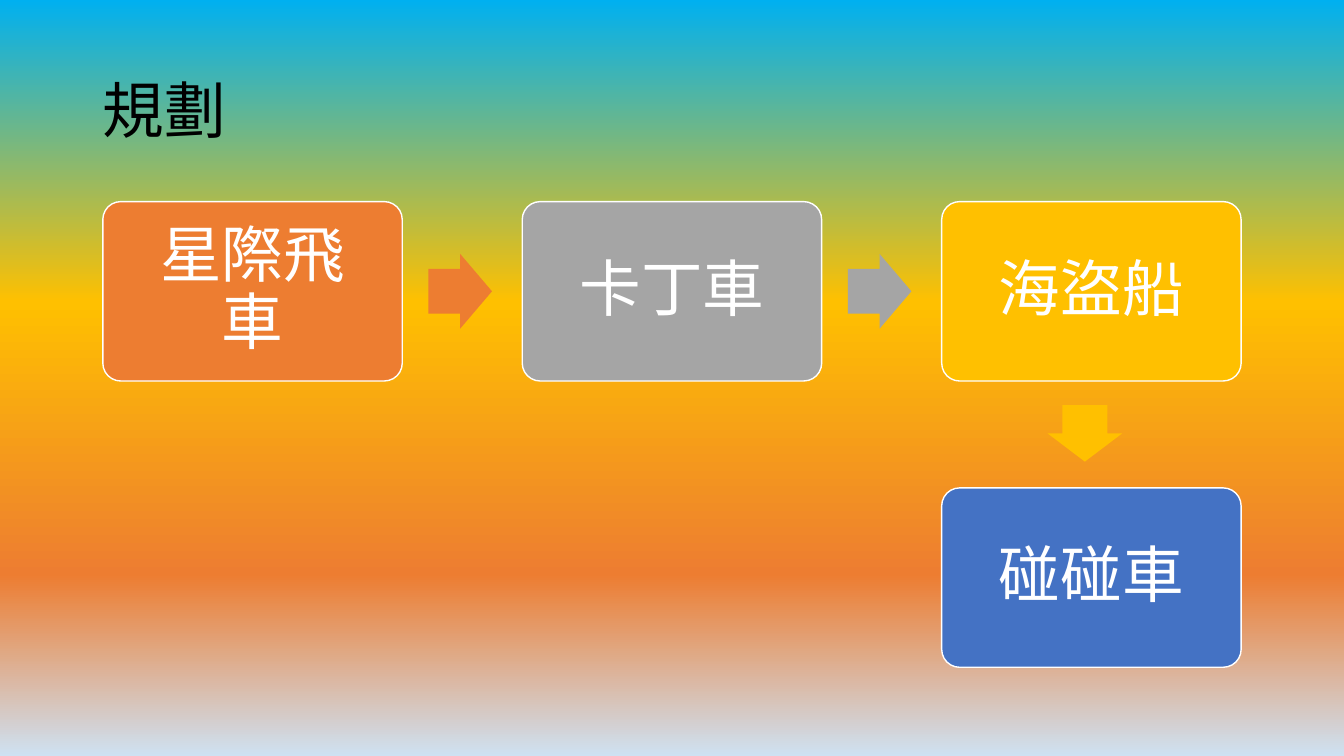
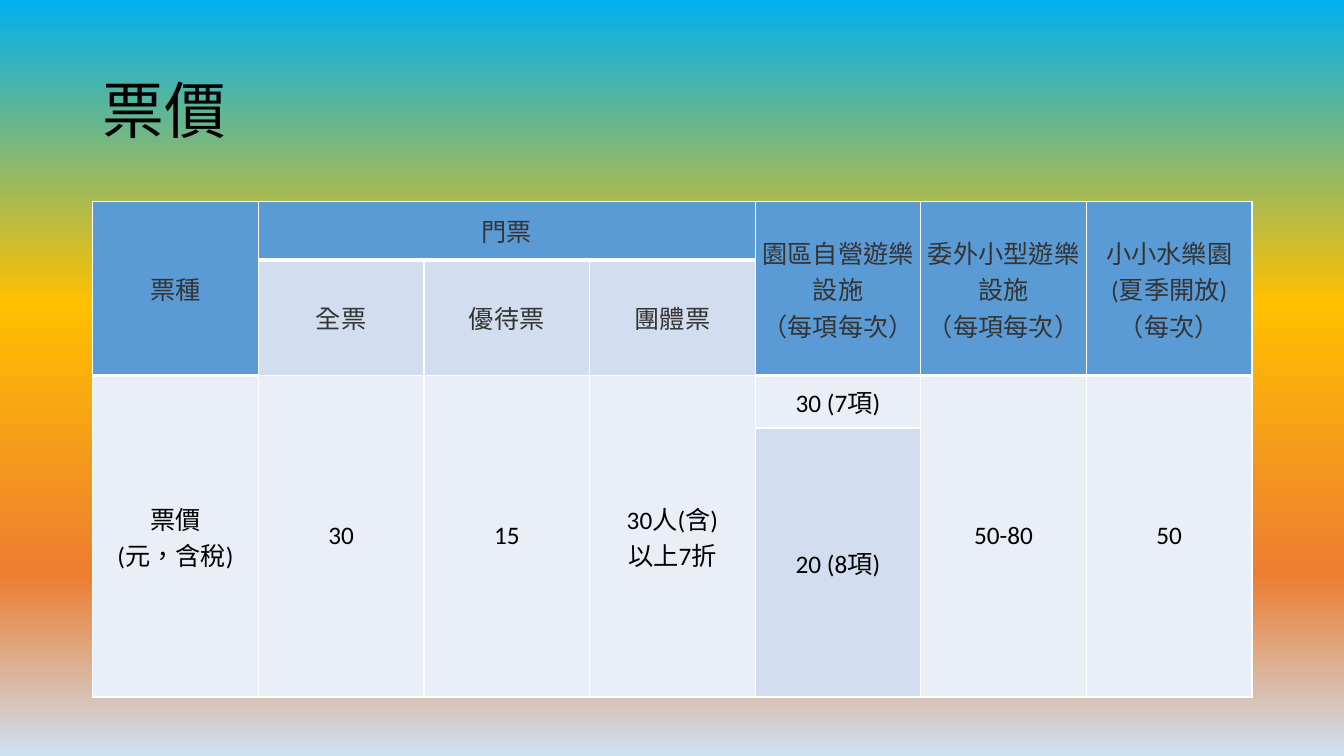
from dataclasses import dataclass
from typing import NamedTuple, Optional

from lxml import etree
from pptx import Presentation
from pptx import util as u
from pptx.dml.color import RGBColor
from pptx.enum import lang, shapes, text
from pptx.oxml.ns import qn

PX = u.Inches(1) // 100  # one px is a hundredth of an inch
FONT = "Calibri"
COLORS = {
    "sky": "00B0F0", "gold": "FFC000", "orange": "ED7D31", "mist": "CEE1F2",
    "gray": "A5A5A5", "blue": "4472C4", "white": "FFFFFF", "black": "000000",
    "header": "5B9BD5", "header_text": "343434", "band": "D2DEEF", "pale": "EAEFF7",
}
BACKGROUND_STOPS = [(0, "sky"), (40, "gold"), (76, "orange"), (100, "mist")]


class Rect(NamedTuple):
    left: int
    top: int
    width: int
    height: int

    def emu(self) -> list[int]:
        return [value * PX for value in self]


@dataclass
class Arrow:
    preset: shapes.MSO_SHAPE
    offset: Rect  # measured from the corner of the card it leaves


@dataclass
class Ride:
    name: str
    color: str
    column: int
    row: int
    arrow: Optional[Arrow] = None


@dataclass
class Entry:
    row: int
    column: int
    label: str
    fill: str
    rows: int = 1
    columns: int = 1


TITLE = Rect(92, 40, 1150, 145)
FIRST_CARD = Rect(102, 200, 297, 178)
COLUMN_PITCH, ROW_PITCH = 416, 284
RIGHT = Arrow(shapes.MSO_SHAPE.RIGHT_ARROW, Rect(323, 52, 63, 74))
DOWN = Arrow(shapes.MSO_SHAPE.DOWN_ARROW, Rect(105, 202, 74, 56))
RIDES = [
    Ride("星際飛車", "orange", 0, 0, RIGHT),
    Ride("卡丁車", "gray", 1, 0, RIGHT),
    Ride("海盜船", "gold", 2, 0, DOWN),
    Ride("碰碰車", "blue", 2, 1),
]

TABLE = Rect(92, 200, 1150, 456)
ROW_HEIGHTS = [58, 79, 52, 267]
COLUMN_COUNT = 7
PRICES = [
    Entry(0, 0, "票種", "header", rows=2),
    Entry(0, 1, "門票", "header", columns=3),
    Entry(0, 4, "園區自營遊樂設施\n（每項每次）", "header", rows=2),
    Entry(0, 5, "委外小型遊樂設施\n（每項每次）", "header", rows=2),
    Entry(0, 6, "小小水樂園\n(夏季開放)\n（每次）", "header", rows=2),
    Entry(1, 1, "全票", "band"),
    Entry(1, 2, "優待票", "band"),
    Entry(1, 3, "團體票", "band"),
    Entry(2, 0, "票價\n(元，含稅)", "pale", rows=2),
    Entry(2, 1, "30", "pale", rows=2),
    Entry(2, 2, "15", "pale", rows=2),
    Entry(2, 3, "30人(含)\n以上7折", "pale", rows=2),
    Entry(2, 4, "30 (7項)", "pale"),
    Entry(3, 4, "20 (8項)", "band"),
    Entry(2, 5, "50-80", "pale", rows=2),
    Entry(2, 6, "50", "pale", rows=2),
]


def rgb(name: str) -> RGBColor:
    return RGBColor.from_string(COLORS[name])


def write(frame, content: str, *, size: int, color: str, align=text.PP_ALIGN.CENTER,
          spacing: float = 1.0) -> None:
    """Fill a text frame with one paragraph, broken at each newline."""
    para = frame.paragraphs[0]
    para.alignment, para.line_spacing = align, spacing
    for index, line in enumerate(content.split("\n")):
        if index:
            para.add_line_break()
        span = para.add_run()
        span.text = line
        span.font.name, span.font.size, span.font.bold = FONT, u.Pt(size), False
        span.font.color.rgb = rgb(color)
        span.font.language_id = lang.MSO_LANGUAGE_ID.TRADITIONAL_CHINESE


def set_insets(target, px: int) -> None:
    target.margin_left = target.margin_right = px * PX
    target.margin_top = target.margin_bottom = px * PX


def paint_background(master) -> None:
    """Give the master the vertical gradient that every slide inherits."""
    master.background.fill.gradient()
    gradient = master.element.find(".//" + qn("p:bg")).find(".//" + qn("a:gradFill"))
    for child in list(gradient):
        gradient.remove(child)
    stops = etree.SubElement(gradient, qn("a:gsLst"))
    for percent, name in BACKGROUND_STOPS:
        stop = etree.SubElement(stops, qn("a:gs"), pos=str(percent * 1000))
        etree.SubElement(stop, qn("a:srgbClr"), val=COLORS[name])
    etree.SubElement(gradient, qn("a:lin"), ang="5400000", scaled="0")


def add_titled_page(deck, title: str):
    page = deck.slides.add_slide(deck.slide_layouts.get_by_name("Title Only"))
    box = page.shapes.title
    box.left, box.top, box.width, box.height = TITLE.emu()
    box.text_frame.auto_size = text.MSO_AUTO_SIZE.NONE
    box.text_frame.vertical_anchor = text.MSO_ANCHOR.MIDDLE
    write(box.text_frame, title, size=44, color="black",
          align=text.PP_ALIGN.LEFT, spacing=0.9)
    return page


def add_block(page, preset, rect: Rect, fill: str, adjustments: list[float],
              outline: Optional[str] = None):
    block = page.shapes.add_shape(preset, *rect.emu())
    block.shadow.inherit = False
    for index, value in enumerate(adjustments):
        block.adjustments[index] = value
    block.fill.solid()
    block.fill.fore_color.rgb = rgb(fill)
    if outline:
        block.line.color.rgb = rgb(outline)
        block.line.width = u.Pt(1)
    else:
        block.line.fill.background()
    return block


def add_ride(page, ride: Ride) -> None:
    rect = FIRST_CARD._replace(left=FIRST_CARD.left + ride.column * COLUMN_PITCH,
                               top=FIRST_CARD.top + ride.row * ROW_PITCH)
    card = add_block(page, shapes.MSO_SHAPE.ROUNDED_RECTANGLE, rect, ride.color,
                     [0.1], outline="white")
    frame = card.text_frame
    frame.word_wrap = True
    frame.vertical_anchor = text.MSO_ANCHOR.MIDDLE
    set_insets(frame, 23)
    write(frame, ride.name, size=44, color="white", spacing=0.9)
    if ride.arrow:
        offset = ride.arrow.offset
        place = offset._replace(left=rect.left + offset.left, top=rect.top + offset.top)
        add_block(page, ride.arrow.preset, place, ride.color, [0.6, 0.5])


def set_borders(cell, bottom: int) -> None:
    properties = cell._tc.get_or_add_tcPr()
    widths = {"a:lnL": 1, "a:lnR": 1, "a:lnT": 1, "a:lnB": bottom}
    for index, (tag, points) in enumerate(widths.items()):
        line = etree.Element(qn(tag), w=str(u.Pt(points)))
        solid = etree.SubElement(line, qn("a:solidFill"))
        etree.SubElement(solid, qn("a:srgbClr"), val=COLORS["white"])
        properties.insert(index, line)


def add_price_table(page) -> None:
    table = page.shapes.add_table(len(ROW_HEIGHTS), COLUMN_COUNT, *TABLE.emu()).table
    table.first_row = table.horz_banding = False
    for row, height in zip(table.rows, ROW_HEIGHTS):
        row.height = height * PX
    for column in table.columns:
        column.width = TABLE.width * PX // COLUMN_COUNT
    for entry in PRICES:
        cell = table.cell(entry.row, entry.column)
        if entry.rows * entry.columns > 1:
            cell.merge(table.cell(entry.row + entry.rows - 1,
                                  entry.column + entry.columns - 1))
        cell.fill.solid()
        cell.fill.fore_color.rgb = rgb(entry.fill)
        cell.vertical_anchor = text.MSO_ANCHOR.MIDDLE
        set_insets(cell, 3)
        set_borders(cell, bottom=3 if entry.fill == "header" else 1)
        write(cell.text_frame, entry.label, size=18,
              color="header_text" if entry.row < 2 else "black")


def main() -> None:
    deck = Presentation()
    deck.slide_width, deck.slide_height = u.Inches(13.33), u.Inches(7.5)
    paint_background(deck.slide_master)

    # Route through the rides
    plan = add_titled_page(deck, "規劃")
    for ride in RIDES:
        add_ride(plan, ride)

    # Ticket prices
    add_price_table(add_titled_page(deck, "票價"))
    deck.save("out.pptx")


if __name__ == "__main__":
    main()
